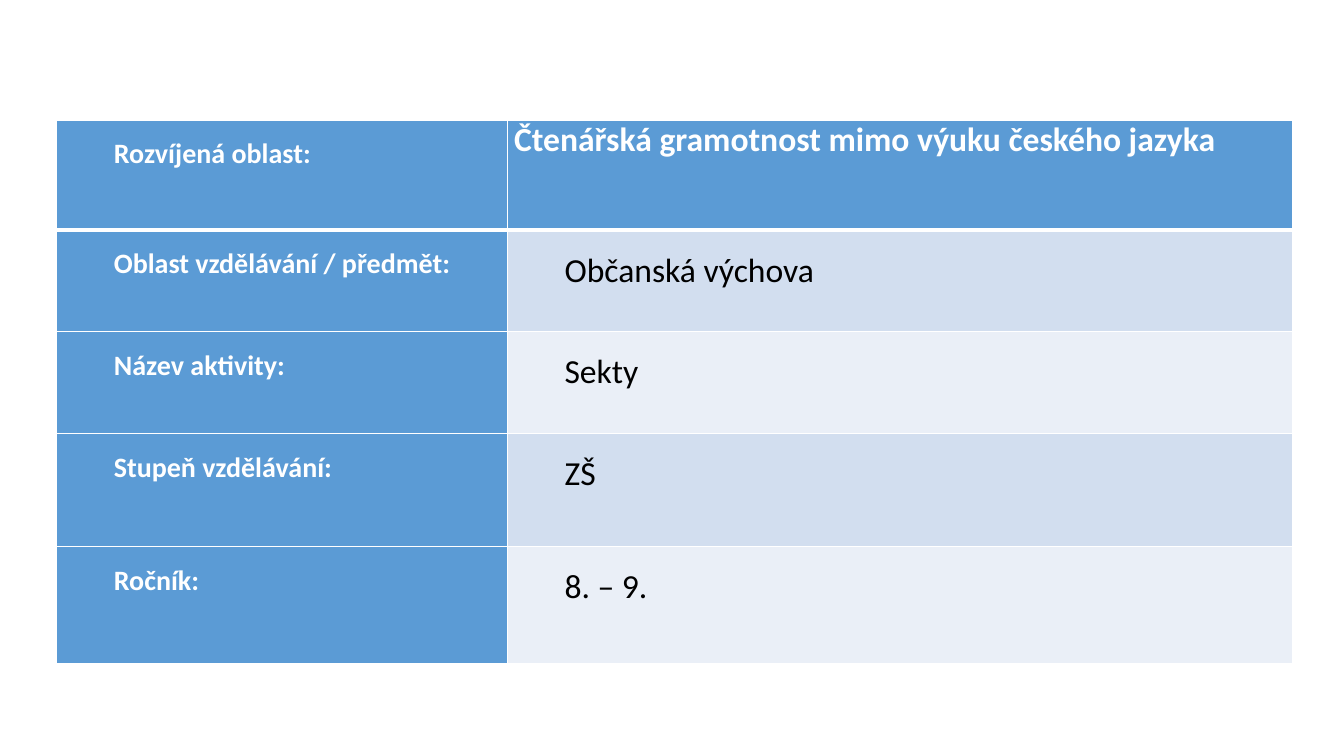
from lxml import etree
from pptx import Presentation
from pptx.dml.color import RGBColor
from pptx.oxml.ns import qn
from pptx.util import Pt

PX = 9144
BLANK_LAYOUT = 6
FONT = "Calibri"
COLORS = {
    "white": "FFFFFF",
    "black": "000000",
    "blue": "5B9BD5",
    "band_dark": "D2DEEF",
    "band_light": "EAEFF7",
}
COLUMN_WIDTHS = [447, 779]
ROW_HEIGHTS = [109, 101, 101, 112, 116]
ACTIVITY = [
    ("Rozvíjená oblast:", "Čtenářská gramotnost mimo výuku českého jazyka"),
    ("Oblast vzdělávání / předmět:", "Občanská výchova"),
    ("Název aktivity:", "Sekty"),
    ("Stupeň vzdělávání:", "ZŠ"),
    ("Ročník:", "8. – 9."),
]


def px(length):
    return length * PX


def rgb(color):
    return RGBColor.from_string(COLORS[color])


def set_borders(cell, bottom_width, top_width):
    properties = cell._tc.get_or_add_tcPr()
    widths = {"a:lnL": 1, "a:lnR": 1, "a:lnT": top_width, "a:lnB": bottom_width}
    for side, width in widths.items():
        line = etree.SubElement(properties, qn(side), w=str(Pt(width)))
        fill = etree.SubElement(line, qn("a:solidFill"))
        etree.SubElement(fill, qn("a:srgbClr"), val=COLORS["white"])


def fill_cell(cell, text, size, color, background, bold, indented):
    cell.margin_left = cell.margin_right = px(7)
    cell.margin_top = cell.margin_bottom = 0
    cell.fill.solid()
    cell.fill.fore_color.rgb = rgb(background)
    cell.text = text
    paragraph = cell.text_frame.paragraphs[0]
    if indented:
        properties = paragraph._p.get_or_add_pPr()
        properties.set("marL", str(px(50)))
        properties.set("indent", "0")
        paragraph.line_spacing = 1.5
    paragraph.font.name = FONT
    paragraph.font.size = Pt(size)
    paragraph.font.bold = bold
    paragraph.font.color.rgb = rgb(color)


def add_activity_table(slide):
    table = slide.shapes.add_table(
        len(ACTIVITY), len(COLUMN_WIDTHS), px(56), px(119),
        px(sum(COLUMN_WIDTHS)), px(sum(ROW_HEIGHTS))).table
    for column, width in zip(table.columns, COLUMN_WIDTHS):
        column.width = px(width)
    for index, (label, value) in enumerate(ACTIVITY):
        table.rows[index].height = px(ROW_HEIGHTS[index])
        label_cell, value_cell = table.rows[index].cells
        heading = index == 0
        for cell in (label_cell, value_cell):
            set_borders(cell, 3 if heading else 1, 3 if index == 1 else 1)
        fill_cell(label_cell, label, 20, "white", "blue", True, True)
        if heading:
            fill_cell(value_cell, value, 24, "white", "blue", True, False)
        else:
            band = "band_dark" if index % 2 else "band_light"
            fill_cell(value_cell, value, 24, "black", band, False, True)


def main():
    presentation = Presentation()
    presentation.slide_width = px(1333)
    presentation.slide_height = px(750)
    slide = presentation.slides.add_slide(presentation.slide_layouts[BLANK_LAYOUT])
    add_activity_table(slide)
    presentation.save("out.pptx")


if __name__ == "__main__":
    main()
